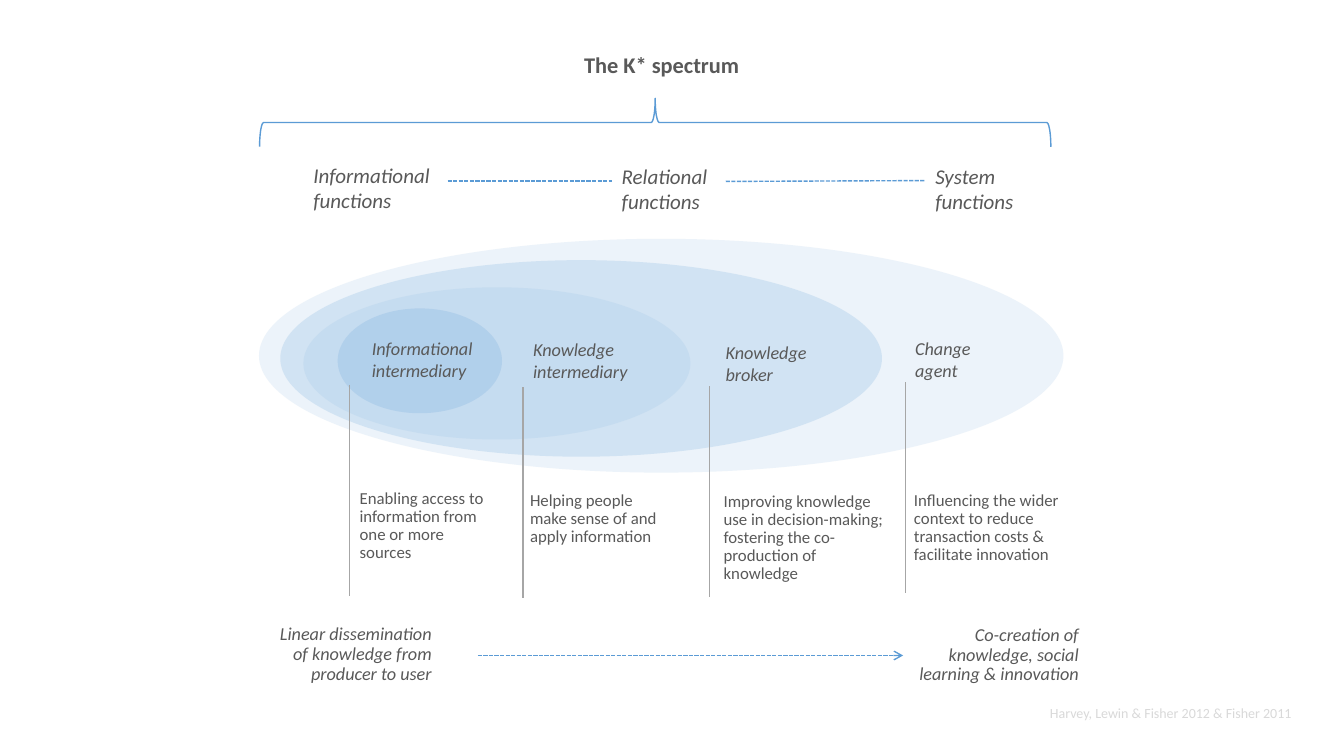
from lxml.etree import SubElement
from pptx import Presentation
from pptx.dml.color import RGBColor
from pptx.enum.dml import MSO_LINE_DASH_STYLE as DASH
from pptx.enum.shapes import MSO_CONNECTOR as CONNECTOR, MSO_SHAPE as SHAPE
from pptx.enum.text import MSO_ANCHOR as ANCHOR, MSO_AUTO_SIZE as AUTOSIZE, PP_ALIGN as ALIGN
from pptx.oxml.ns import qn
from pptx.util import Pt

TEXT = RGBColor(0x59, 0x59, 0x59)
CREDIT = RGBColor(0xD9, 0xD9, 0xD9)
BLUE = RGBColor(0x5B, 0x9B, 0xD5)
GREY = RGBColor(0xA6, 0xA6, 0xA6)
PALE = RGBColor(0xDE, 0xEB, 0xF7)
LIGHT = RGBColor(0xBD, 0xD7, 0xEE)
MID = RGBColor(0x9D, 0xC3, 0xE6)

FUNCTIONS = [
    ("Informational functions", 216.7, 112.3, 132.5),
    ("Relational functions", 437, 113, 132.5),
    ("System functions", 661, 113, 110.2),
]
ROLES = [
    ((185, 170.6, 574.6, 167), PALE, 56, "Change\vagent", (646.6, 237.6), (646.6, 272.9),
     "Influencing the wider context to reduce transaction costs & facilitate innovation",
     (645.8, 347.8, 132.5, 59.8)),
    ((200.2, 185.8, 429.8, 140.4), LIGHT, 56, "Knowledge\vbroker", (511.2, 240.5), (506.9, 275.8),
     "Improving knowledge use in decision-making; fostering the co-production of knowledge",
     (509.8, 348.5, 129.6, 72.7)),
    ((216.7, 205.2, 276.5, 108.7), LIGHT, 56, "Knowledge\vintermediary", (373.7, 238.3), (373.7, 276.5),
     "Helping people make sense of and apply information",
     (371.5, 347.8, 108.7, 46.8)),
    ((241.2, 220.3, 117.4, 74.9), MID, 48, "Informational intermediary", (258.5, 237.6), (249.8, 275),
     "Enabling access to information from one or more sources",
     (249.8, 346.3, 108.7, 59.8)),
]
OUTCOMES = [
    ("Linear dissemination of knowledge from producer to user", 182.9, 442.8),
    ("Co-creation of knowledge, social learning & innovation", 645.1, 443.5),
]


def write(frame, text, size=12, color=TEXT, bold=False, italic=False, align=ALIGN.LEFT, spacing=1.0):
    frame.word_wrap = True
    frame.auto_size = AUTOSIZE.NONE
    frame.vertical_anchor = ANCHOR.TOP
    frame.text = text
    paragraph = frame.paragraphs[0]
    paragraph.alignment = align
    paragraph.line_spacing = spacing
    for run in paragraph.runs:
        font = run.font
        font.name, font.size, font.bold, font.italic = "Calibri", Pt(size), bold, italic
        font.color.rgb = color


class Spectrum:
    """Draws the elements of a spectrum diagram on one slide."""

    def __init__(self, slide):
        self.slide = slide
        self.shapes = slide.shapes

    def title(self, text, left, top, width, height):
        heading = self.shapes.title
        heading.left, heading.top, heading.width, heading.height = map(Pt, (left, top, width, height))
        write(heading.text_frame, text, size=16, bold=True, align=ALIGN.CENTER)

    def label(self, text, left, top, width, height, **style):
        box = self.shapes.add_textbox(*map(Pt, (left, top, width, height)))
        write(box.text_frame, text, **style)

    def oval(self, bounds, color, opacity):
        ring = self.shapes.add_shape(SHAPE.OVAL, *map(Pt, bounds))
        ring.shadow.inherit = False
        ring.fill.solid()
        ring.fill.fore_color.rgb = color
        ring.line.fill.background()
        tint = ring.fill._xPr.find(qn("a:solidFill"))[0]
        SubElement(tint, qn("a:alpha"), val=str(opacity * 1000))

    def brace(self, left, top, width, height):
        span = self.shapes.add_shape(SHAPE.RIGHT_BRACE, *map(Pt, (left, top, width, height)))
        span.rotation = 270
        span.shadow.inherit = False
        span.fill.background()
        span.line.color.rgb = BLUE
        span.line.width = Pt(1)

    def line(self, x1, y1, x2, y2, color=BLUE, dashed=True, arrow=False):
        link = self.shapes.add_connector(CONNECTOR.STRAIGHT, *map(Pt, (x1, y1, x2, y2)))
        link.line.color.rgb = color
        link.line.width = Pt(1)
        if dashed:
            link.line.dash_style = DASH.SQUARE_DOT
        if arrow:
            SubElement(link.line._get_or_add_ln(), qn("a:tailEnd"), type="arrow")
        SubElement(link._element.spPr, qn("a:effectLst"))


def main():
    deck = Presentation()
    deck.slide_width, deck.slide_height = Pt(960), Pt(540)
    spectrum = Spectrum(deck.slides.add_slide(deck.slide_layouts[5]))

    spectrum.label("Harvey, Lewin & Fisher 2012 & Fisher 2011", 587.5, 499.7, 342, 19.4,
                   size=10, color=CREDIT, align=ALIGN.RIGHT)
    spectrum.title("The K* spectrum", 401, 33.1, 143.3, 26.6)
    spectrum.brace(450.7, -195.1, 34.6, 565.2)
    for text, left, top, width in FUNCTIONS:
        spectrum.label(text, left, top, width, 43.9, size=15, italic=True)
    spectrum.line(319.7, 129.2, 437, 129.2)
    spectrum.line(518.4, 129.6, 661, 129)

    for bounds, color, opacity, role, role_at, (x, y), purpose, purpose_box in ROLES:
        spectrum.oval(bounds, color, opacity)
        spectrum.line(x, y, x, y + 150.5, color=GREY, dashed=False)
        spectrum.label(role, *role_at, 132.5, 38.9, size=13, italic=True)
        spectrum.label(purpose, *purpose_box, spacing=0.9)

    for text, left, top in OUTCOMES:
        spectrum.label(text, left, top, 132.5, 49.7, size=13, italic=True, align=ALIGN.RIGHT, spacing=0.9)
    spectrum.line(341.3, 468.2, 645.1, 468.2, arrow=True)

    deck.save("out.pptx")


if __name__ == "__main__":
    main()
